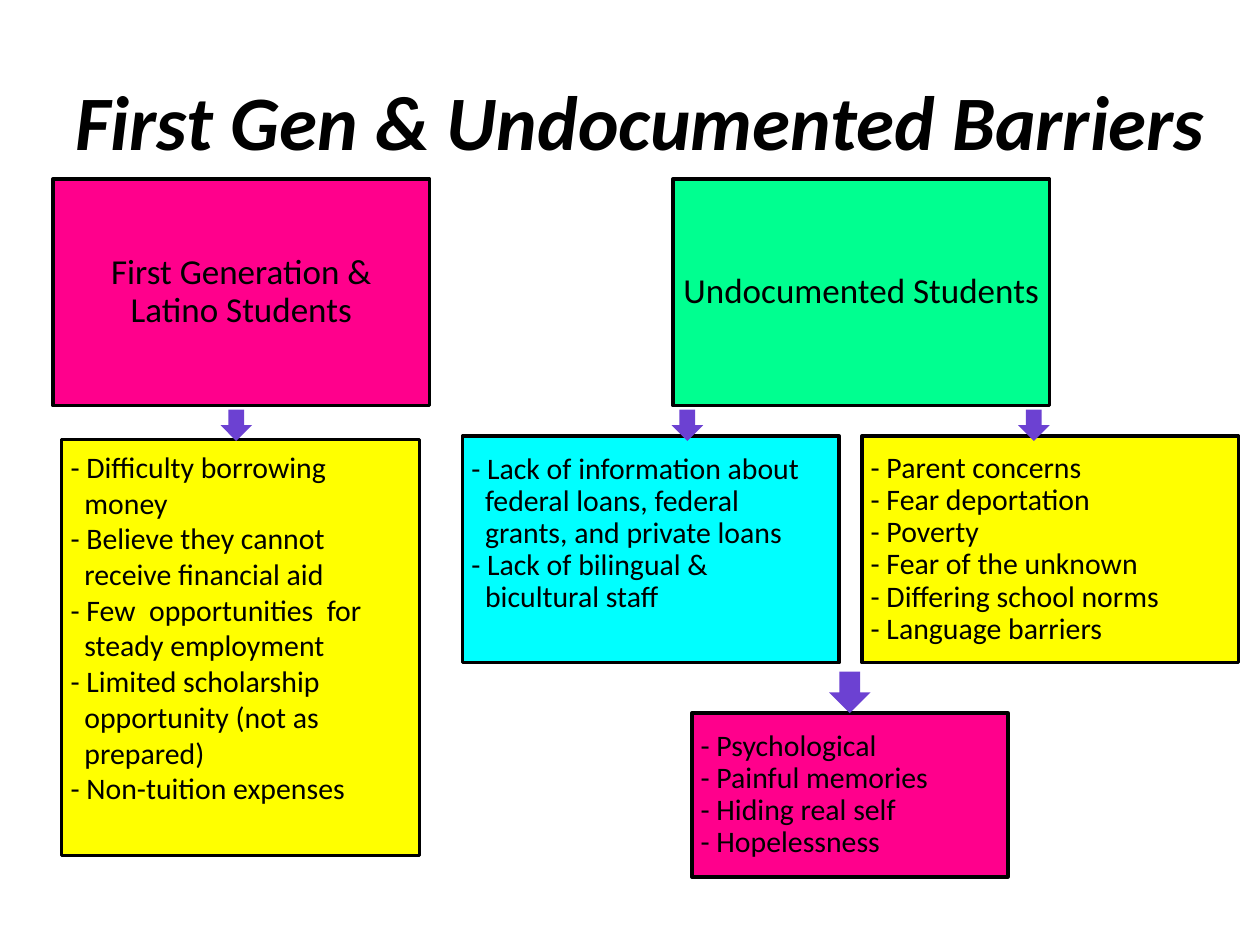
"""Build the slide on barriers for first generation and undocumented students."""
from pptx import Presentation
from pptx.dml.color import RGBColor
from pptx.enum.shapes import MSO_SHAPE as Shape
from pptx.enum.text import MSO_ANCHOR as Anchor, MSO_AUTO_SIZE as AutoSize, PP_ALIGN as Align
from pptx.util import Inches, Pt

BLACK = RGBColor(0x00, 0x00, 0x00)
PINK = RGBColor(0xFF, 0x00, 0x8C)
GREEN = RGBColor(0x00, 0xFF, 0x90)
CYAN = RGBColor(0x00, 0xFF, 0xFF)
YELLOW = RGBColor(0xFF, 0xFF, 0x00)
PURPLE = RGBColor(0x6C, 0x41, 0xD2)


def style_font(paragraph, size):
    paragraph.font.name = "Calibri"
    paragraph.font.size = Pt(size)
    paragraph.font.color.rgb = BLACK


def add_box(area, fill, lines, size, align, anchor, inset, top_inset, spacing):
    box = slide.shapes.add_shape(Shape.RECTANGLE, *map(Inches, area))
    box.shadow.inherit = False
    box.fill.solid()
    box.fill.fore_color.rgb = fill
    box.line.color.rgb = BLACK
    box.line.width = Pt(2)
    frame = box.text_frame
    frame.word_wrap = True
    frame.vertical_anchor = anchor
    frame.margin_left = frame.margin_right = frame.margin_bottom = Inches(inset)
    frame.margin_top = Inches(top_inset)
    frame.text = "\n".join(lines)
    for paragraph in frame.paragraphs:
        paragraph.alignment = align
        paragraph.line_spacing = spacing
        style_font(paragraph, size)
        if align == Align.LEFT:
            properties = paragraph._p.get_or_add_pPr()
            properties.set("marL", str(Inches(0.11)))
            properties.set("indent", str(-Inches(0.11)))


prs = Presentation()
prs.slide_width, prs.slide_height = Inches(10), Inches(7.5)
slide = prs.slides.add_slide(prs.slide_layouts[5])

title = slide.shapes.title
title.left, title.top, title.width, title.height = map(Inches, (0.5, 0.5, 9.5, 1.25))
heading = title.text_frame
heading.text = "First Gen & Undocumented Barriers"
heading.auto_size = AutoSize.NONE
heading.vertical_anchor = Anchor.TOP
heading.margin_top = Inches(0.08)
heading.paragraphs[0].alignment = Align.LEFT
style_font(heading.paragraphs[0], 44)
heading.paragraphs[0].font.bold = True
heading.paragraphs[0].font.italic = True

student_groups = [
    (0.42, PINK, ["First Generation &", "Latino Students"]),
    (5.34, GREEN, ["Undocumented Students"]),
]
for left, fill, lines in student_groups:
    add_box((left, 1.42, 2.99, 1.8), fill, lines, 20, Align.CENTER, Anchor.MIDDLE, 0.05, 0.05, 0.9)

barriers = [
    ((3.67, 3.46, 2.99, 1.8), CYAN, Anchor.TOP, 0.14, 0.9, [
        "Lack of information about\vfederal loans, federal\vgrants, and private loans",
        "Lack of bilingual &\vbicultural staff",
    ]),
    ((0.49, 3.49, 2.84, 3.3), YELLOW, Anchor.TOP, 0.07, 1.0, [
        "Difficulty borrowing\vmoney",
        "Believe they cannot\vreceive financial aid",
        "Few  opportunities  for\vsteady employment",
        "Limited scholarship\vopportunity (not as\vprepared)",
        "Non-tuition expenses",
    ]),
    ((6.84, 3.46, 2.99, 1.8), YELLOW, Anchor.MIDDLE, 0.07, 0.9, [
        "Parent concerns",
        "Fear deportation",
        "Poverty",
        "Fear of the unknown",
        "Differing school norms",
        "Language barriers",
    ]),
    ((5.49, 5.66, 2.51, 1.3), PINK, Anchor.MIDDLE, 0.07, 0.9, [
        "Psychological",
        "Painful memories",
        "Hiding real self",
        "Hopelessness",
    ]),
]
for area, fill, anchor, top_inset, spacing, items in barriers:
    lines = [f"- {item}" for item in items]
    add_box(area, fill, lines, 17, Align.LEFT, anchor, 0.07, top_inset, spacing)

for left, top, side in [(1.75, 3.25, 0.25), (5.33, 3.25, 0.25), (6.58, 5.33, 0.33), (8.08, 3.25, 0.25)]:
    arrow = slide.shapes.add_shape(Shape.DOWN_ARROW, *map(Inches, (left, top, side, side)))
    arrow.shadow.inherit = False
    arrow.fill.solid()
    arrow.fill.fore_color.rgb = PURPLE
    arrow.line.fill.background()

prs.save("out.pptx")
